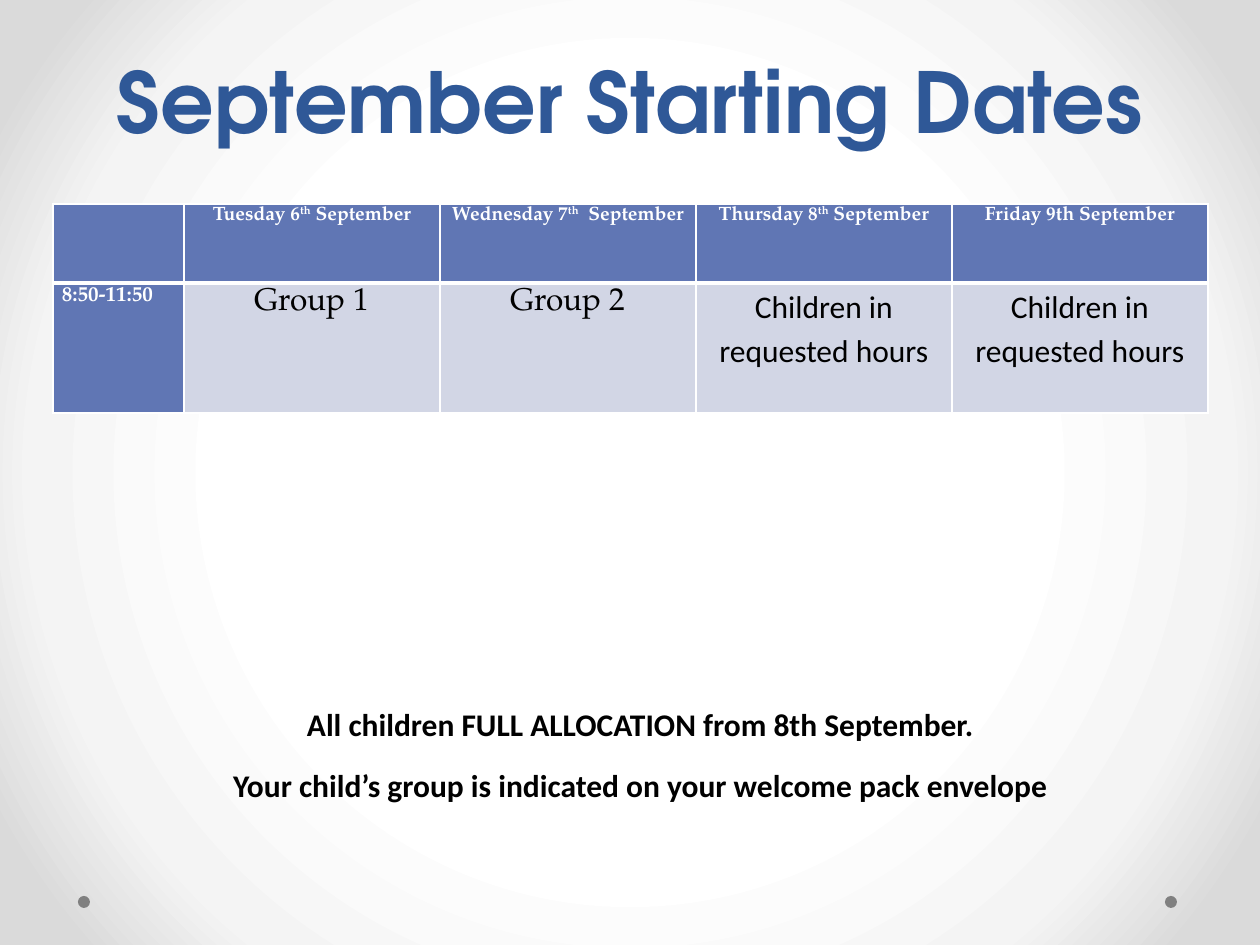
from lxml import etree
from pptx import Presentation
from pptx.dml.color import RGBColor
from pptx.enum.shapes import MSO_SHAPE
from pptx.enum.text import MSO_ANCHOR, MSO_AUTO_SIZE, PP_ALIGN
from pptx.oxml.ns import qn
from pptx.util import Emu, Pt

CENTER, LEFT = PP_ALIGN.CENTER, PP_ALIGN.LEFT
OVAL = MSO_SHAPE.OVAL
COLORS = {"title": "2F5897", "header": "6076B4", "body": "D2D6E5",
          "dot": "808080", "white": "FFFFFF", "black": "000000",
          "mist": "F4F4F4", "edge": "DADADA"}
SERIF, SANS, DISPLAY = "TeX Gyre Pagella", "Calibri", "TeX Gyre Adventor"


def px(count):
    return Emu(round(count * 914400 / 126))


def style(para, font, size, color, bold, align=CENTER, spacing=1.15):
    para.alignment = align
    para.line_spacing = spacing
    for span in para.runs:
        span.font.name = font
        span.font.size = Pt(size)
        span.font.bold = bold
        span.font.color.rgb = RGBColor.from_string(COLORS[color])


deck = Presentation()
deck.slide_width, deck.slide_height = px(1260), px(945)
page = deck.slides.add_slide(deck.slide_layouts[5])

# Background: white centre fading to grey at the corners
page.background.fill.gradient()
gradient = page.element.find(".//" + qn("a:gradFill"))
for child in list(gradient):
    gradient.remove(child)
stops = etree.SubElement(gradient, qn("a:gsLst"))
for percent, color in ((50, "white"), (76, "mist"), (92, "edge")):
    stop = etree.SubElement(stops, qn("a:gs"), pos=str(percent * 1000))
    etree.SubElement(stop, qn("a:srgbClr"), val=COLORS[color])
circle = etree.SubElement(gradient, qn("a:path"), path="circle")
etree.SubElement(circle, qn("a:fillToRect"), l="50000", t="50000", r="50000", b="50000")

# Corner dots
for left in (78, 1165):
    dot = page.shapes.add_shape(OVAL, px(left), px(896), px(12), px(12))
    dot.shadow.inherit = False
    dot.fill.solid()
    dot.fill.fore_color.rgb = RGBColor.from_string(COLORS["dot"])
    dot.line.fill.background()

# Title
title = page.shapes.title
title.left, title.top, title.width, title.height = px(63), px(21), px(1134), px(136)
title.text_frame.text = "September Starting Dates"
title.text_frame.vertical_anchor = MSO_ANCHOR.BOTTOM
title.text_frame.auto_size = MSO_AUTO_SIZE.NONE
style(title.text_frame.paragraphs[0], DISPLAY, 48, "title", True, spacing=Pt(58))

# Closing notes
notes = page.shapes.add_textbox(px(21), px(693), px(1239), px(118)).text_frame
notes.word_wrap = True
notes.text = ("All children FULL ALLOCATION from 8th September.\n"
              "Your child’s group is indicated on your welcome pack envelope")
for para in notes.paragraphs:
    style(para, SANS, 18, "black", True)
    para.space_after = Pt(10)

# Timetable: a tuple holds the runs of one cell, the second run raised
rows = [
    [(), ("Tuesday 6", "th", " September"), ("Wednesday 7", "th", "  September"),
     ("Thursday 8", "th", " September"), ("Friday 9th September",)],
    [("8:50-11:50",), ("Group 1",), ("Group 2",),
     ("Children in requested hours",), ("Children in requested hours",)],
]
table = page.shapes.add_table(2, 5, px(53), px(204), px(1155), px(209)).table
for column, width in zip(table.columns, [131] + [256] * 4):
    column.width = px(width)
for row, height in zip(table.rows, (79, 130)):
    row.height = px(height)

for r, row in enumerate(rows):
    for c, parts in enumerate(row):
        cell = table.cell(r, c)
        cell.margin_left = cell.margin_right = px(9)
        cell.margin_top = cell.margin_bottom = 0
        heading = r == 0 or c == 0

        # Text
        para = cell.text_frame.paragraphs[0]
        for index, part in enumerate(parts):
            span = para.add_run()
            span.text = part
            if index == 1:
                span.font._element.set("baseline", "30000")
        if heading:
            style(para, SERIF, 11 if r == 0 else 12, "white", True,
                  CENTER if r == 0 else LEFT)
        else:
            style(para, SERIF if c < 3 else SANS, 18, "black", False)

        # Borders, which precede the fill; the rule under the header is thick
        properties = cell._tc.get_or_add_tcPr()
        for side in "LRTB":
            thick = (r, side) in ((0, "B"), (1, "T"))
            border = etree.SubElement(properties, qn("a:ln" + side),
                                      w=str(Pt(3 if thick else 1)))
            solid = etree.SubElement(border, qn("a:solidFill"))
            etree.SubElement(solid, qn("a:srgbClr"), val=COLORS["white"])
        cell.fill.solid()
        cell.fill.fore_color.rgb = RGBColor.from_string(
            COLORS["header" if heading else "body"])

deck.save("out.pptx")
